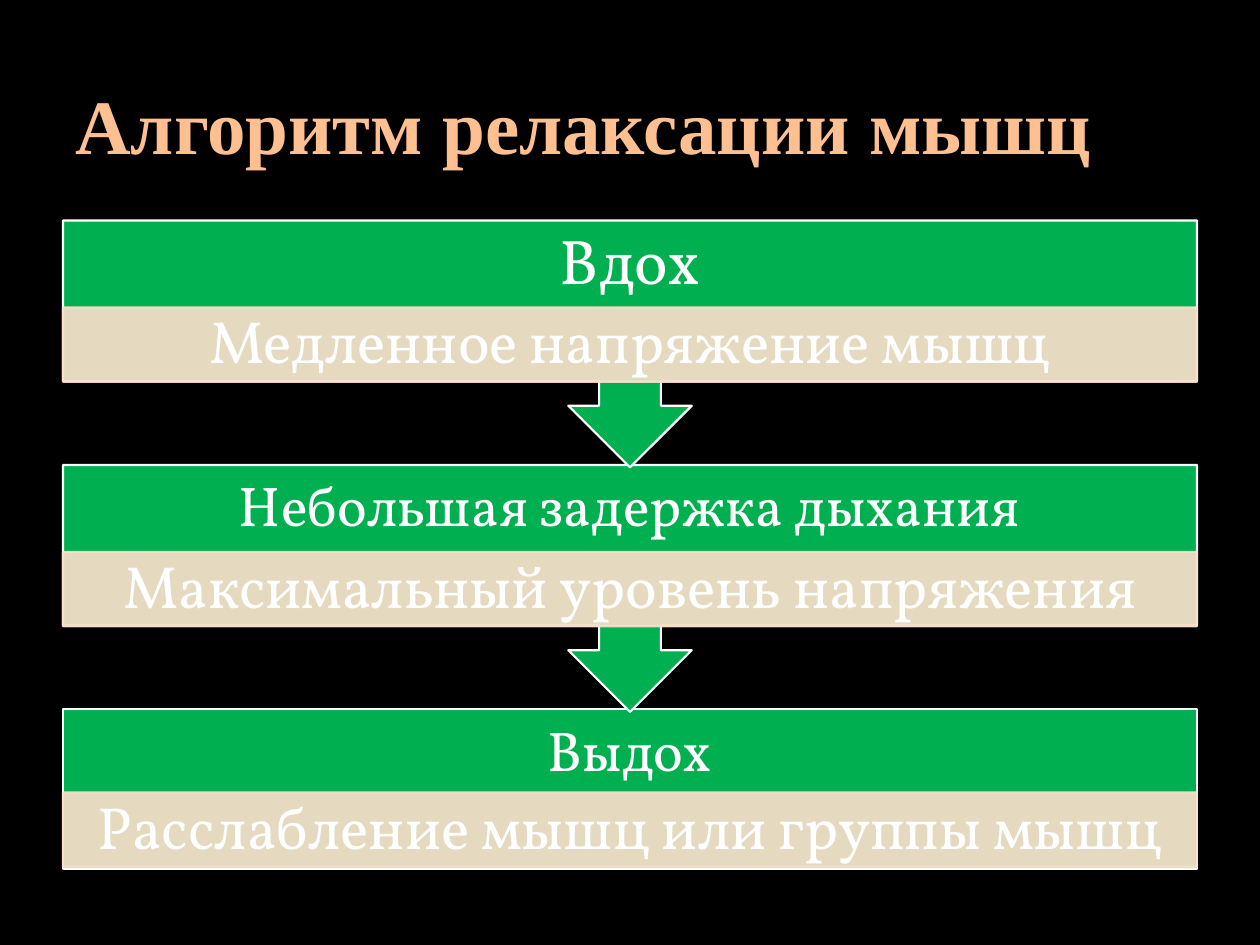
from pptx import Presentation, util as u
from pptx.dml.color import RGBColor
from pptx.enum import shapes, text
from pptx.oxml.ns import qn
from lxml import etree

BLACK = RGBColor(0x00, 0x00, 0x00)
PEACH = RGBColor(0xFF, 0xC0, 0x91)
GREEN = RGBColor(0x00, 0xB0, 0x50)
BEIGE = RGBColor(0xFE, 0xDF, 0xCD)
WHITE = RGBColor(0xFF, 0xFF, 0xFF)

deck = Presentation()
deck.slide_width, deck.slide_height = u.Inches(10), u.Inches(7.5)
slide = deck.slides.add_slide(deck.slide_layouts[6])
slide.background.fill.solid()
slide.background.fill.fore_color.rgb = BLACK

LEFT, WIDTH = u.Inches(0.5), u.Inches(9)
TOP, PITCH = 1.75, 1.94
CALLOUT_HEIGHT, BLOCK_HEIGHT = 1.96, 1.27
HEADER_HEIGHT, BAR_HEIGHT = 0.69, 0.59


def add_block(kind, top, height, fill, line):
    block = slide.shapes.add_shape(kind, LEFT, u.Inches(top), WIDTH, u.Inches(height))
    block.shadow.inherit = False
    block.fill.solid()
    block.fill.fore_color.rgb = fill
    block.line.color.rgb = line
    block.line.width = u.Pt(1.25)
    return block


def write(holder, words, font, size, color, inset_x, inset_y, spacing, align):
    frame = holder.text_frame
    frame.word_wrap = True
    frame.vertical_anchor = text.MSO_ANCHOR.MIDDLE
    frame.margin_left = frame.margin_right = u.Inches(inset_x)
    frame.margin_top = frame.margin_bottom = u.Inches(inset_y)
    paragraph = frame.paragraphs[0]
    paragraph.text = words
    paragraph.alignment = align
    paragraph.line_spacing = spacing
    paragraph.font.name = font
    paragraph.font.size = u.Pt(size)
    paragraph.font.color.rgb = color
    return paragraph


title = slide.shapes.add_textbox(LEFT, u.Inches(0.3), WIDTH, u.Inches(1.25))
heading = write(title, "Алгоритм релаксации мышц", "Times New Roman", 44, PEACH,
                0.1, 0.05, 1.15, text.PP_ALIGN.JUSTIFY)
heading.font.bold = True
heading.space_after = u.Pt(10)

steps = [
    ("Вдох", 36, 0.28, "Медленное напряжение мышц"),
    ("Небольшая задержка дыхания", 32, 0.25, "Максимальный уровень напряжения"),
    ("Выдох", 32, 0.25, "Расслабление мышц или группы мышц"),
]
last = len(steps) - 1

for row, (breath, size, inset, action) in reversed(list(enumerate(steps))):
    top = TOP + row * PITCH
    if row == last:
        add_block(shapes.MSO_SHAPE.RECTANGLE, top, BLOCK_HEIGHT, GREEN, WHITE)
        bar_top = top + HEADER_HEIGHT - 0.03
    else:
        callout = add_block(shapes.MSO_SHAPE.UP_ARROW_CALLOUT, top, CALLOUT_HEIGHT, GREEN, WHITE)
        callout.rotation = 180
        bar_top = top + HEADER_HEIGHT

    header = slide.shapes.add_textbox(LEFT, u.Inches(top), WIDTH, u.Inches(HEADER_HEIGHT))
    write(header, breath, "Vollkorn", size, WHITE, inset, inset, 0.9, text.PP_ALIGN.CENTER)

    bar = add_block(shapes.MSO_SHAPE.RECTANGLE, bar_top, BAR_HEIGHT, BEIGE, BEIGE)
    for color in bar._element.spPr.iter(qn("a:srgbClr")):
        etree.SubElement(color, qn("a:alpha"), val="90000")
    write(bar, action, "Vollkorn", 34, WHITE, 0.26, 0.05, 0.9, text.PP_ALIGN.CENTER)

deck.save("out.pptx")
